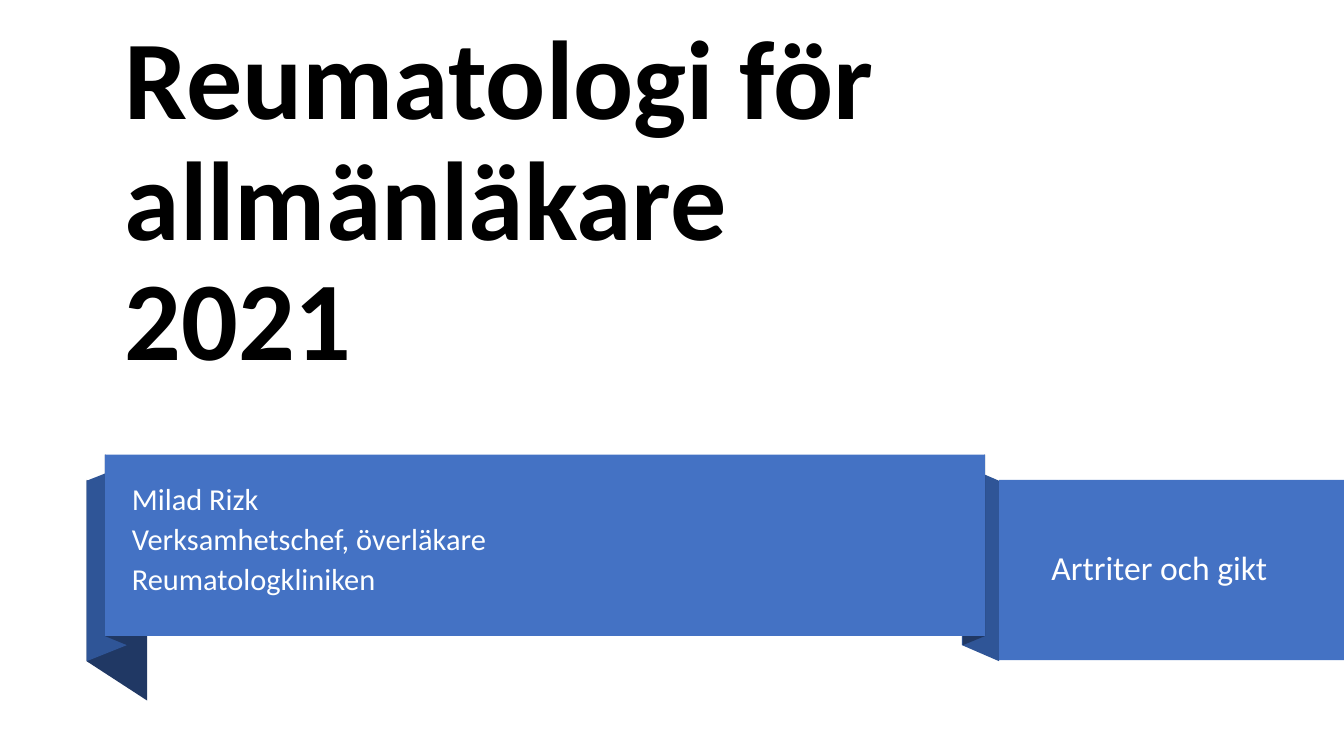
from pptx import Presentation
from pptx.dml.color import RGBColor
from pptx.enum.shapes import MSO_SHAPE
from pptx.enum.text import MSO_ANCHOR
from pptx.util import Inches, Pt

# Content
TITLE = ["Reumatologi för allmänläkare 2021"]
AUTHOR = ["Milad Rizk", "Verksamhetschef, överläkare", "Reumatologkliniken"]
TOPIC = ["Artriter och gikt"]

THEME = {
    "font": "Calibri",
    "black": "000000", "white": "FFFFFF", "pale": "FEFFFF",
    "blue": "4472C4", "mid": "2F5597", "dark": "203864",
    "title": 80, "author": 21.7, "topic": 24,
}

# Ribbon folds: outer x, outer y, inner x, inner y, height, colour
FOLDS = [
    (0.86, 4.76, 1.46, 5.15, 1.8, "dark"),
    (0.86, 4.77, 1.26, 4.61, 1.79, "mid"),
    (1.04, 4.51, 1.26, 4.6, 1.8, "dark"),
    (9.91, 4.77, 9.54, 4.61, 1.79, "mid"),
    (9.77, 4.51, 9.55, 4.6, 1.8, "dark"),
]
BANNER = (1.04, 4.51, 8.73, 1.8)
TAIL = (9.91, 4.76, 3.42, 1.79)

deck = Presentation()
deck.slide_width, deck.slide_height = Inches(13.33), Inches(7.5)
slide = deck.slides.add_slide(deck.slide_layouts[6])
shapes = slide.shapes


def tint(name):
    return RGBColor.from_string(THEME[name])


def paint(shape, color):
    shape.shadow.inherit = False
    shape.fill.solid()
    shape.fill.fore_color.rgb = tint(color)
    shape.line.fill.background()


def add_fold(x1, y1, x2, y2, high, color):
    pen = shapes.build_freeform(Inches(x1), Inches(y1 + high))
    ends = [(x2, y2 + high), (x2, y2), (x1, y1)]
    pen.add_line_segments([(Inches(x), Inches(y)) for x, y in ends], close=True)
    paint(pen.convert_to_shape(), color)


def add_bar(box):
    paint(shapes.add_shape(MSO_SHAPE.RECTANGLE, *map(Inches, box)), "blue")


def add_text(box, lines, size, color, anchor, bold=False, pitch=1.0, gap=0):
    frame = shapes.add_textbox(*map(Inches, box)).text_frame
    frame.word_wrap = True
    frame.vertical_anchor = anchor
    for i, line in enumerate(lines):
        para = frame.add_paragraph() if i else frame.paragraphs[0]
        para.line_spacing = pitch
        para.space_before = Pt(gap if i else 0)
        run = para.add_run()
        run.text = line
        run.font.name = THEME["font"]
        run.font.size = Pt(THEME[size])
        run.font.bold = bold
        run.font.color.rgb = tint(color)


# Title
add_text((1.14, 0.38, 8.38, 3.49), TITLE, "title", "black",
         MSO_ANCHOR.BOTTOM, bold=True, pitch=0.9)

# Ribbon with the author
for fold in FOLDS:
    add_fold(*fold)
add_bar(BANNER)
add_text((1.21, 4.79, 8.38, 1.19), AUTHOR, "author", "pale",
         MSO_ANCHOR.MIDDLE, pitch=0.7, gap=10)

# Ribbon tail with the topic
add_bar(TAIL)
add_text((10.33, 5.38, 3.0, 0.5), TOPIC, "topic", "white", MSO_ANCHOR.TOP)

deck.save("out.pptx")
